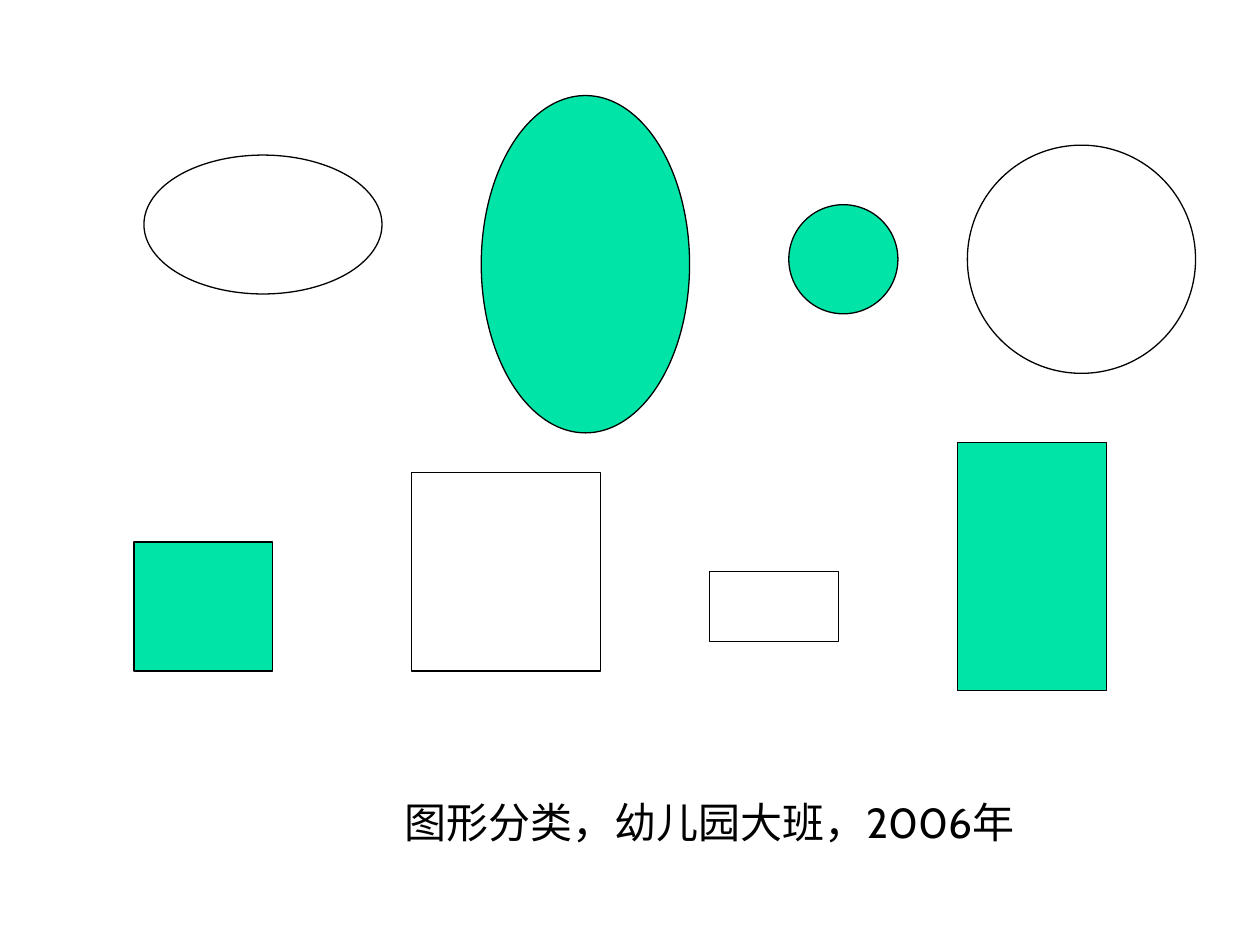
"""Build a kindergarten shape-sorting slide on a two-millimetre grid."""
from pptx import Presentation
from pptx.dml.color import RGBColor
from pptx.enum.shapes import MSO_SHAPE
from pptx.util import Inches, Mm, Pt

RECTANGLE = MSO_SHAPE.RECTANGLE
OVAL = MSO_SHAPE.OVAL
COLOURS = {"paper": "FFFFFF", "ink": "000000", "green": "00E4A8"}
CELL = Mm(2)
ORIGIN_X, ORIGIN_Y = Inches(0.04), Inches(0.05)
BLANK_LAYOUT = 6

deck = Presentation()
deck.slide_width, deck.slide_height = Inches(10), Inches(7.5)
slide = deck.slides.add_slide(deck.slide_layouts[BLANK_LAYOUT])


def add_figure(kind, left, top, width, height, fill, outline):
    figure = slide.shapes.add_shape(kind, left, top, width, height)
    figure.shadow.inherit = False
    if fill:
        figure.fill.solid()
        figure.fill.fore_color.rgb = RGBColor.from_string(COLOURS[fill])
    else:
        figure.fill.background()
    figure.line.color.rgb = RGBColor.from_string(COLOURS[outline])
    figure.line.width = Pt(0.75)


add_figure(RECTANGLE, 0, 0, deck.slide_width, deck.slide_height, "paper", "paper")

FIGURES = [
    (RECTANGLE, 13, 54, 14, 13, "green"),
    (RECTANGLE, 41, 47, 19, 20, None),
    (RECTANGLE, 71, 57, 13, 7, None),
    (RECTANGLE, 96, 44, 15, 25, "green"),
    (OVAL, 14, 15, 24, 14, None),
    (OVAL, 48, 9, 21, 34, "green"),
    (OVAL, 79, 20, 11, 11, "green"),
    (OVAL, 97, 14, 23, 23, None),
]
for kind, column, row, columns, rows, fill in FIGURES:
    add_figure(kind, ORIGIN_X + column * CELL, ORIGIN_Y + row * CELL,
               columns * CELL, rows * CELL, fill, "ink")

caption = slide.shapes.add_textbox(
    ORIGIN_X + 39 * CELL, ORIGIN_Y + 79 * CELL, 70 * CELL, Inches(0.51))
caption.text_frame.word_wrap = True
sentence = caption.text_frame.paragraphs[0]
sentence.text = "图形分类，幼儿园大班，2006年"
sentence.font.name = "Cabin"
sentence.font.size = Pt(24)
sentence.font.color.rgb = RGBColor.from_string(COLOURS["ink"])

deck.save("out.pptx")
